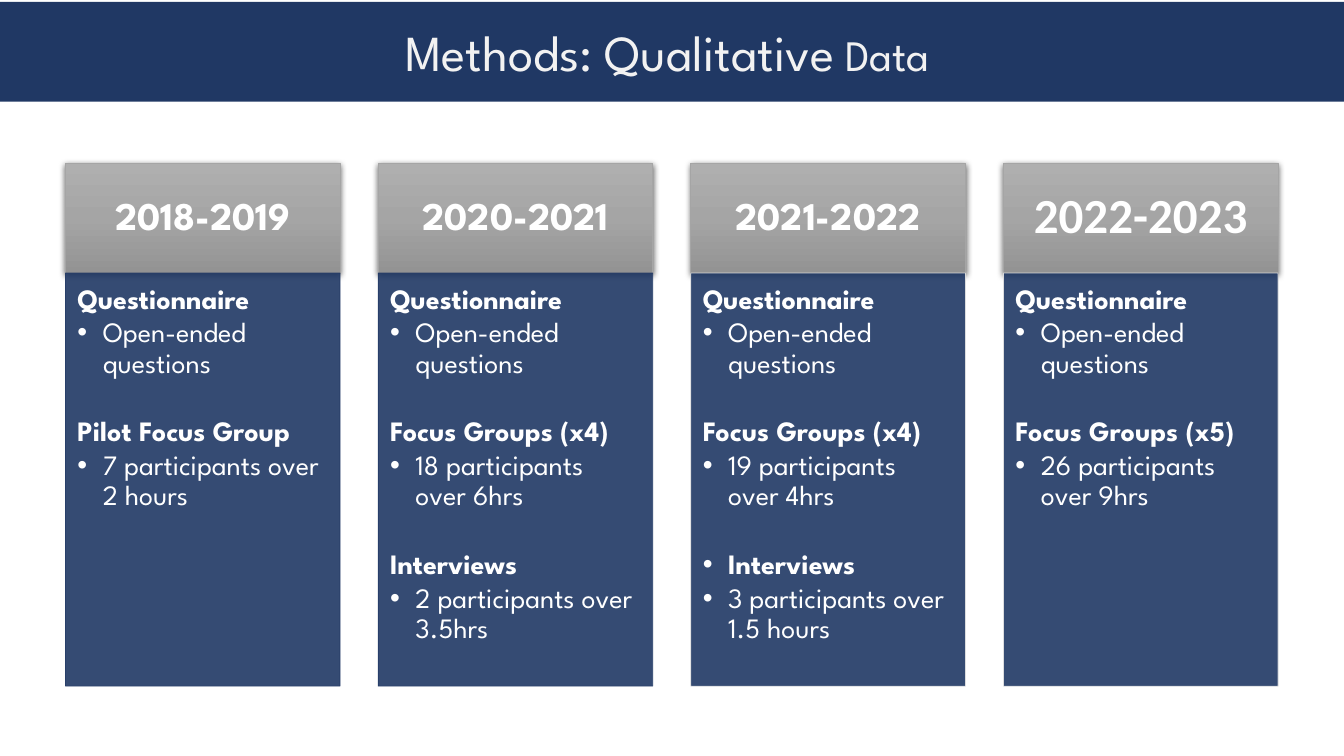
"""Build the slide on qualitative data methods."""
from lxml.etree import SubElement
from pptx import Presentation
from pptx.dml.color import RGBColor
from pptx.enum.shapes import MSO_SHAPE
from pptx.enum.text import MSO_ANCHOR, MSO_AUTO_SIZE, PP_ALIGN
from pptx.oxml.ns import qn
from pptx.util import Cm, Pt

NAVY = RGBColor(0x20, 0x38, 0x64)
WHITE = RGBColor(0xFF, 0xFF, 0xFF)
PALE = RGBColor(0xF2, 0xF2, 0xF2)
SILVER = RGBColor(0xE1, 0xE1, 0xE1)
GREY = RGBColor(0xA5, 0xA5, 0xA5)
GREY_STOPS = [(0, "AFAFAF"), (50, "A5A5A5"), (100, "939393")]
SPARTAN = "League Spartan"

TITLE = [("Methods: Qualitative", 36), (" Data", 31)]
SURVEY = ("Questionnaire", False, "Open-ended questions")
COLUMNS = [
    ("2018-2019", SPARTAN, 28, NAVY, [
        SURVEY,
        ("Pilot Focus Group", False, "7 participants over 2 hours")]),
    ("2020-2021", SPARTAN, 28, NAVY, [
        SURVEY,
        ("Focus Groups (x4)", False, "18 participants over 6hrs"),
        ("Interviews", False, "2 participants over 3.5hrs")]),
    ("2021-2022", SPARTAN, 28, SILVER, [
        SURVEY,
        ("Focus Groups (x4)", False, "19 participants over 4hrs"),
        ("Interviews", True, "3 participants over 1.5 hours")]),
    ("2022-2023", "Calibri", 35, SILVER, [
        SURVEY,
        ("Focus Groups (x5)", False, "26 participants over 9hrs")]),
]

SLIDE_WIDTH, SLIDE_HEIGHT = 33.87, 19.05
LEFT, PITCH, WIDTH = 1.65, 7.88, 6.92
HEADER_TOP, HEADER_HEIGHT, LIST_HEIGHT = 4.11, 2.77, 10.41
LIST_TOP = HEADER_TOP + HEADER_HEIGHT


def place(shape, left, top, width, height):
    shape.left, shape.top = Cm(left), Cm(top)
    shape.width, shape.height = Cm(width), Cm(height)


def set_frame(frame, anchor, left, top, right, bottom):
    frame.word_wrap = True
    frame.auto_size = MSO_AUTO_SIZE.NONE
    frame.vertical_anchor = anchor
    frame.margin_left, frame.margin_top = Cm(left), Cm(top)
    frame.margin_right, frame.margin_bottom = Cm(right), Cm(bottom)


def set_font(font, name, size, color, bold=False):
    font.name, font.size, font.bold = name, Pt(size), bold
    font.color.rgb = color


def add_box(page, left, top, width, height):
    box = page.shapes.add_shape(
        MSO_SHAPE.RECTANGLE, Cm(left), Cm(top), Cm(width), Cm(height))
    box.shadow.inherit = False
    page.shapes.title.element.addprevious(box.element)
    return box


def add_banner(page):
    banner = add_box(page, 0, 0.05, SLIDE_WIDTH, 2.51)
    banner.fill.solid()
    banner.fill.fore_color.rgb = NAVY
    banner.line.fill.background()


def write_title(title):
    place(title, 0.13, 0.41, 33.38, 1.8)
    set_frame(title.text_frame, MSO_ANCHOR.TOP, 0.25, 0.13, 0.25, 0.13)
    para = title.text_frame.paragraphs[0]
    para.alignment = PP_ALIGN.CENTER
    for text, size in TITLE:
        span = para.add_run()
        span.text = text
        set_font(span.font, SPARTAN, size, PALE)


def shade_header(header):
    header.fill.gradient()
    header.fill.gradient_angle = 270
    stops = header.element.spPr.find(".//" + qn("a:gsLst"))
    for stop in list(stops):
        stops.remove(stop)
    for percent, color in GREY_STOPS:
        stop = SubElement(stops, qn("a:gs"), pos=str(percent * 1000))
        SubElement(stop, qn("a:srgbClr"), val=color)
    header.line.color.rgb = GREY
    header.line.width = Pt(0.5)
    effects = header.element.spPr.find(qn("a:effectLst"))
    shadow = SubElement(effects, qn("a:outerShdw"), blurRad=str(Pt(4.5)),
                        dist=str(Pt(1.5)), dir="5400000", rotWithShape="0")
    black = SubElement(shadow, qn("a:srgbClr"), val="000000")
    SubElement(black, qn("a:alpha"), val="63000")


def add_header(page, left, year, font_name, size):
    header = add_box(page, left, HEADER_TOP, WIDTH, HEADER_HEIGHT)
    shade_header(header)
    set_frame(header.text_frame, MSO_ANCHOR.MIDDLE, 0.56, 0.3, 0.56, 0.3)
    para = header.text_frame.paragraphs[0]
    para.text = year
    para.alignment = PP_ALIGN.CENTER
    para.line_spacing = 0.9
    set_font(para.font, font_name, size, WHITE, True)


def write_item(para, text, bold, bulleted, gap):
    para.text = text
    para.alignment = PP_ALIGN.LEFT
    para.line_spacing = 0.9
    para.space_before, para.space_after = Pt(gap), Pt(2.5)
    props = para._p.get_or_add_pPr()
    props.set("marL", str(Cm(0.64)))
    props.set("indent", str(Cm(-0.64)))
    if bulleted:
        SubElement(props, qn("a:buFont"), typeface="Arial")
        SubElement(props, qn("a:buChar"), char="•")
    else:
        SubElement(props, qn("a:buNone"))
    set_font(para.font, SPARTAN, 20, WHITE, bold)


def write_list(body, left, line_color, groups):
    place(body, left, LIST_TOP, WIDTH, LIST_HEIGHT)
    body.fill.solid()
    body.fill.fore_color.rgb = NAVY
    body.line.color.rgb = line_color
    body.line.width = Pt(0.5)
    for color in body.element.spPr.iter(qn("a:srgbClr")):
        SubElement(color, qn("a:alpha"), val="90000")
    frame = body.text_frame
    set_frame(frame, MSO_ANCHOR.TOP, 0.3, 0.3, 0.4, 0.43)
    for number, (heading, bulleted, detail) in enumerate(groups):
        para = frame.add_paragraph() if number else frame.paragraphs[0]
        write_item(para, heading, True, bulleted, 25 if number else 0)
        write_item(frame.add_paragraph(), detail, False, True, 0)


def main():
    deck = Presentation()
    deck.slide_width, deck.slide_height = Cm(SLIDE_WIDTH), Cm(SLIDE_HEIGHT)
    page = deck.slides.add_slide(deck.slide_layouts.get_by_name("Comparison"))
    add_banner(page)
    write_title(page.shapes.title)
    bodies = list(page.placeholders)[1:]
    for index, (body, column) in enumerate(zip(bodies, COLUMNS)):
        year, font_name, size, line_color, groups = column
        left = LEFT + index * PITCH
        add_header(page, left, year, font_name, size)
        write_list(body, left, line_color, groups)
    deck.save("out.pptx")


if __name__ == "__main__":
    main()
